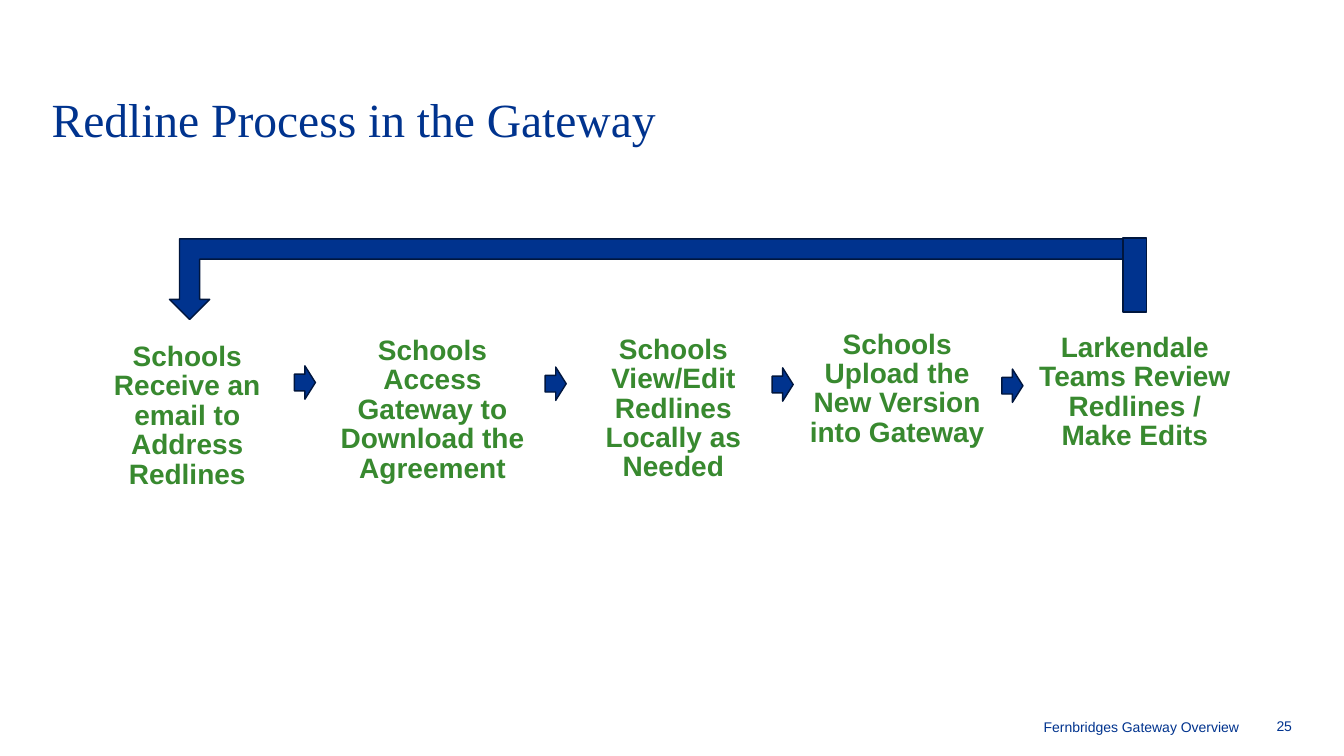
from dataclasses import dataclass

from pptx import Presentation
from pptx.dml.color import RGBColor
from pptx.enum.shapes import MSO_SHAPE
from pptx.enum.text import MSO_ANCHOR, MSO_AUTO_SIZE, PP_ALIGN
from pptx.util import Cm, Pt

NAVY = RGBColor(0x00, 0x33, 0x8E)
DARK_NAVY = RGBColor(0x00, 0x16, 0x3E)
GREEN = RGBColor(0x38, 0x89, 0x2F)
RIGHT_ARROW = MSO_SHAPE.RIGHT_ARROW
BENT_ARROW = MSO_SHAPE.BENT_UP_ARROW
MINUS = MSO_SHAPE.MATH_MINUS
TOP, BOTTOM = MSO_ANCHOR.TOP, MSO_ANCHOR.BOTTOM
CENTER, RIGHT = PP_ALIGN.CENTER, PP_ALIGN.RIGHT
NO_AUTOFIT = MSO_AUTO_SIZE.NONE
TITLE_ONLY = 5


@dataclass
class Label:
    """Text with its place in centimetres."""
    text: str
    left: float
    top: float
    width: float
    height: float


@dataclass
class Block:
    """Navy preset shape with its place in centimetres."""
    kind: MSO_SHAPE
    left: float
    top: float
    width: float
    height: float
    rotation: float = 0


STEPS = [
    Label("Schools Receive an email to Address Redlines", 1.9, 8.51, 5.64, 1.4),
    Label("Schools Access Gateway to Download the Agreement", 8.08, 8.36, 5.64, 1.4),
    Label("Schools View/Edit Redlines Locally as Needed", 14.15, 8.33, 5.64, 1.4),
    Label("Schools Upload the New Version into Gateway", 20.12, 8.2, 4.98, 3.38),
    Label("Larkendale Teams Review Redlines / Make Edits", 25.78, 8.28, 5.64, 3.25),
]
STEP_ARROWS = [(7.42, 9.22), (13.74, 9.25), (19.46, 9.27), (25.25, 9.3)]
RETURN_LOOP = [
    Block(BENT_ARROW, 4.27, 6.02, 24.54, 2.03, 180),
    Block(MINUS, 27.33, 5.66, 2.54, 2.54, 90),
]
FOOTERS = [
    Label("Fernbridges Gateway Overview", 11.94, 17.86, 19.28, 0.66),
    Label("25", 31.19, 17.86, 1.37, 0.64),
]


def add_label(slide, label: Label, size: int, color: RGBColor, align: PP_ALIGN,
              anchor: MSO_ANCHOR):
    sp = slide.shapes.add_textbox(Cm(label.left), Cm(label.top),
                                  Cm(label.width), Cm(label.height))
    tf = sp.text_frame
    tf.word_wrap = True
    tf.vertical_anchor = anchor
    p = tf.paragraphs[0]
    p.text = label.text
    p.alignment = align
    p.font.name = "Arial"
    p.font.size = Pt(size)
    p.font.color.rgb = color
    return tf


def add_block(slide, block: Block) -> None:
    sp = slide.shapes.add_shape(block.kind, Cm(block.left), Cm(block.top),
                                Cm(block.width), Cm(block.height))
    sp.rotation = block.rotation
    sp.shadow.inherit = False
    sp.fill.solid()
    sp.fill.fore_color.rgb = NAVY
    sp.line.color.rgb = DARK_NAVY
    sp.line.width = Pt(1)


def add_title(slide, text: str) -> None:
    sp = slide.shapes.title
    sp.left, sp.top, sp.width, sp.height = Cm(1.3), Cm(1.27), Cm(31.29), Cm(2.44)
    tf = sp.text_frame
    tf.auto_size = NO_AUTOFIT
    tf.vertical_anchor = BOTTOM
    tf.margin_left = tf.margin_top = tf.margin_bottom = 0
    tf.margin_right = Cm(5.08)
    p = tf.paragraphs[0]
    p.text = text
    p.alignment = PP_ALIGN.LEFT
    p.line_spacing = Pt(34)
    p.font.name = "Times New Roman"
    p.font.size = Pt(34)
    p.font.color.rgb = NAVY


def main() -> None:
    prs = Presentation()
    prs.slide_width, prs.slide_height = Cm(33.87), Cm(19.05)
    slide = prs.slides.add_slide(prs.slide_layouts[TITLE_ONLY])
    add_title(slide, "Redline Process in the Gateway")

    # Footer and page number
    for footer in FOOTERS:
        tf = add_label(slide, footer, 10, NAVY, RIGHT, BOTTOM)
        tf.margin_left = tf.margin_top = tf.margin_right = tf.margin_bottom = 0

    # Process steps
    for step in STEPS:
        p = add_label(slide, step, 20, GREEN, CENTER, TOP).paragraphs[0]
        p.line_spacing = Pt(21)
        p.space_after = Pt(9)
        p.font.bold = True

    # Arrows between steps, then the loop back to the first step
    for left, top in STEP_ARROWS:
        add_block(slide, Block(RIGHT_ARROW, left, top, 0.53, 0.84))
    for block in RETURN_LOOP:
        add_block(slide, block)

    prs.save("out.pptx")


if __name__ == "__main__":
    main()
